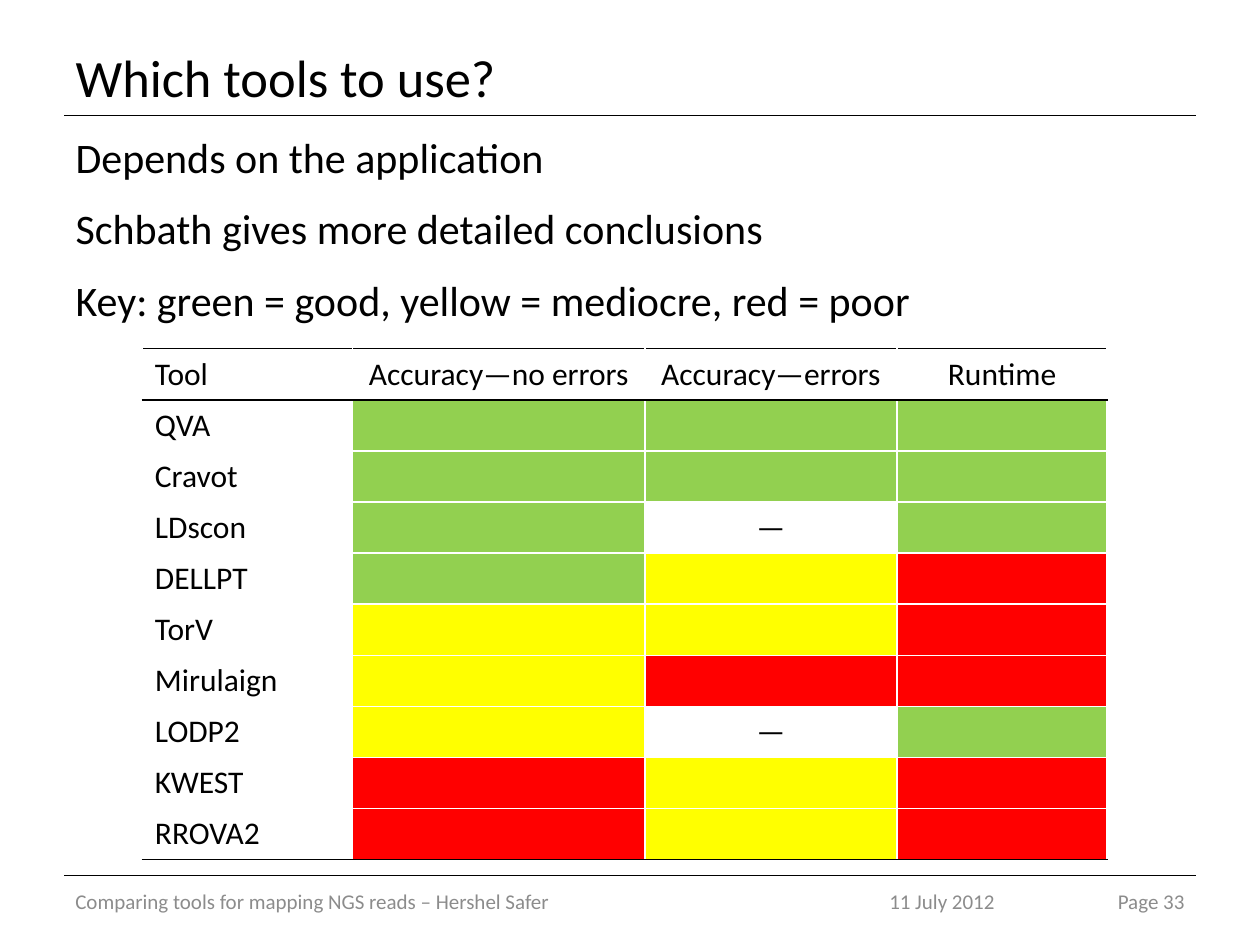
from dataclasses import dataclass

from lxml import etree
from pptx import Presentation
from pptx.dml.color import RGBColor
from pptx.enum.shapes import MSO_CONNECTOR
from pptx.enum.text import MSO_ANCHOR, MSO_AUTO_SIZE, PP_ALIGN
from pptx.oxml.ns import qn
from pptx.util import Cm, Pt

LEFT, CENTER, RIGHT = PP_ALIGN.LEFT, PP_ALIGN.CENTER, PP_ALIGN.RIGHT
JUSTIFY = PP_ALIGN.JUSTIFY
MIDDLE, TOP = MSO_ANCHOR.MIDDLE, MSO_ANCHOR.TOP
NO_AUTOFIT = MSO_AUTO_SIZE.NONE
STRAIGHT = MSO_CONNECTOR.STRAIGHT


@dataclass(frozen=True)
class Theme:
    font: str = "Calibri"
    ink: str = "000000"
    paper: str = "FFFFFF"
    muted: str = "8C8C8C"
    good: str = "92D050"
    mediocre: str = "FFFF00"
    poor: str = "FF0000"
    title_size: int = 30
    body_size: int = 24
    table_size: int = 18
    footer_size: int = 12
    rule_width: float = 0.75
    border_width: float = 1


THEME = Theme()
RATING_COLORS = {"G": THEME.good, "Y": THEME.mediocre, "R": THEME.poor}

POINTS = [
    "Depends on the application",
    "Schbath gives more detailed conclusions",
    "Key: green = good, yellow = mediocre, red = poor",
]
HEADERS = ["Tool", "Accuracy—no errors", "Accuracy—errors", "Runtime"]
# One letter per rated column: good (G), mediocre (Y), poor (R), or not rated (—)
RATINGS = {
    "QVA": "GGG",
    "Cravot": "GGG",
    "LDscon": "G—G",
    "DELLPT": "GYR",
    "TorV": "YYR",
    "Mirulaign": "YRR",
    "LODP2": "Y—G",
    "KWEST": "RYR",
    "RROVA2": "RYR",
}
COLUMN_WIDTHS = [4.24, 5.89, 5.08, 4.24]
ROW_HEIGHT = 1.03
FOOTER_TOP, FOOTER_HEIGHT = 17.65, 1.02
FOOTERS = [
    ("Comparing tools for mapping NGS reads – Hershel Safer", 1.27, 15.24, LEFT),
    ("11 July 2012", 16.69, 4.6, CENTER),
    ("Page 33", 21.49, 2.64, RIGHT),
]


def place(shape, left, top, width, height):
    shape.left, shape.top = Cm(left), Cm(top)
    shape.width, shape.height = Cm(width), Cm(height)


def format_paragraph(paragraph, size, color, align):
    paragraph.alignment = align
    for run in paragraph.runs:
        run.font.name = THEME.font
        run.font.size = Pt(size)
        run.font.color.rgb = RGBColor.from_string(color)


def set_frame(frame, text, anchor, size, color, align):
    frame.text = text
    frame.word_wrap = True
    frame.auto_size = NO_AUTOFIT
    frame.vertical_anchor = anchor
    for paragraph in frame.paragraphs:
        format_paragraph(paragraph, size, color, align)


def add_rule(slide, y):
    rule = slide.shapes.add_connector(STRAIGHT, Cm(1.3), Cm(y), Cm(24.1), Cm(y))
    rule.line.color.rgb = RGBColor.from_string(THEME.ink)
    rule.line.width = Pt(THEME.rule_width)
    etree.SubElement(rule._element.spPr, qn("a:effectLst"))


def fill_title(slide):
    title = slide.shapes.title
    place(title, 1.27, 0.76, 22.86, 1.55)
    set_frame(title.text_frame, "Which tools to use?", MIDDLE,
              THEME.title_size, THEME.ink, LEFT)


def fill_points(slide):
    body = slide.placeholders[1]
    place(body, 1.27, 2.52, 22.86, 15.01)
    set_frame(body.text_frame, "\n".join(POINTS), TOP,
              THEME.body_size, THEME.ink, JUSTIFY)
    for paragraph in body.text_frame.paragraphs:
        paragraph.space_before = Pt(0)
        paragraph.space_after = Pt(12)
        properties = paragraph._p.get_or_add_pPr()
        properties.set("marL", "0")
        properties.set("indent", "0")
        etree.SubElement(properties, qn("a:buNone"))


def add_footer(slide, text, left, width, align):
    footer = slide.shapes.add_textbox(
        Cm(left), Cm(FOOTER_TOP), Cm(width), Cm(FOOTER_HEIGHT))
    set_frame(footer.text_frame, text, MIDDLE,
              THEME.footer_size, THEME.muted, align)


def set_borders(cell, top, bottom):
    """Draw white side borders and the given top and bottom colours."""
    properties = cell._tc.get_or_add_tcPr()
    sides = {"L": THEME.paper, "R": THEME.paper, "T": top, "B": bottom}
    for side, color in sides.items():
        border = etree.SubElement(properties, qn(f"a:ln{side}"),
                                  w=str(Pt(THEME.border_width)))
        fill = etree.SubElement(border, qn("a:solidFill"))
        etree.SubElement(fill, qn("a:srgbClr"), val=color)


def fill_cell(cell, value, align):
    """Show a rating letter as a colour and any other value as text."""
    if value in RATING_COLORS:
        cell.fill.solid()
        cell.fill.fore_color.rgb = RGBColor.from_string(RATING_COLORS[value])
        return
    cell.fill.background()
    cell.text_frame.text = value
    format_paragraph(cell.text_frame.paragraphs[0],
                     THEME.table_size, THEME.ink, align)


def add_ratings(slide):
    rows = [HEADERS] + [[tool, *marks] for tool, marks in RATINGS.items()]
    table = slide.shapes.add_table(
        len(rows), len(HEADERS), Cm(2.87), Cm(7.03),
        Cm(sum(COLUMN_WIDTHS)), Cm(ROW_HEIGHT * len(rows))).table
    table.first_row = table.horz_banding = False
    for column, width in zip(table.columns, COLUMN_WIDTHS):
        column.width = Cm(width)

    ruled_edges = {0, 1, len(rows)}
    edges = [THEME.ink if edge in ruled_edges else THEME.paper
             for edge in range(len(rows) + 1)]
    for r, values in enumerate(rows):
        table.rows[r].height = Cm(ROW_HEIGHT)
        for c, value in enumerate(values):
            cell = table.cell(r, c)
            set_borders(cell, edges[r], edges[r + 1])
            fill_cell(cell, value, CENTER if c else LEFT)


def main():
    deck = Presentation()
    deck.slide_width, deck.slide_height = Cm(25.4), Cm(19.05)
    slide = deck.slides.add_slide(deck.slide_layouts[1])
    for y in (2.33, FOOTER_TOP):
        add_rule(slide, y)
    fill_title(slide)
    fill_points(slide)
    for footer in FOOTERS:
        add_footer(slide, *footer)
    add_ratings(slide)
    deck.save("out.pptx")


if __name__ == "__main__":
    main()
